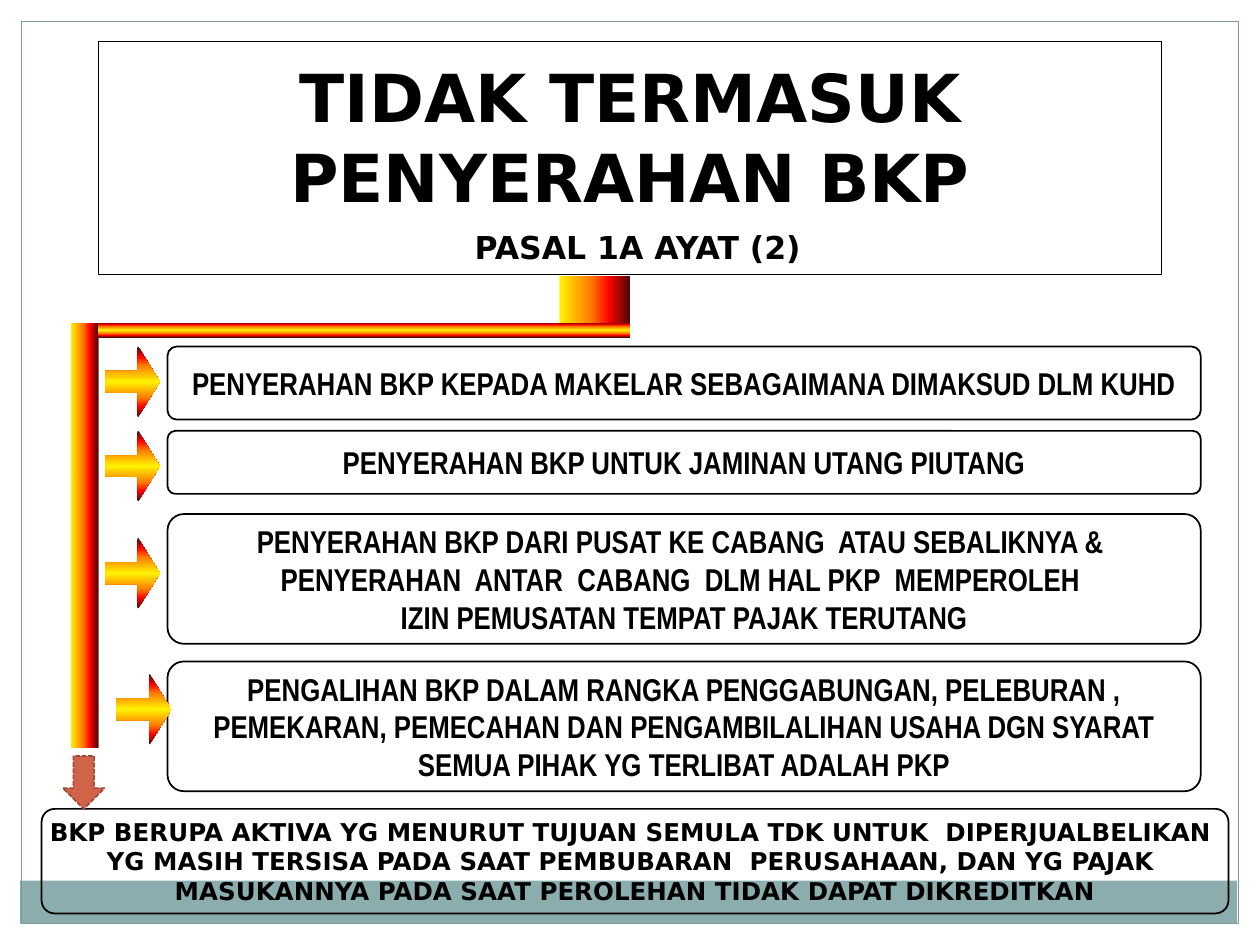
import pptx
import pptx.util
import pptx.dml.color
import pptx.enum.shapes
import pptx.enum.text
import pptx.oxml
import pptx.oxml.ns

SHAPE = pptx.enum.shapes.MSO_SHAPE
ANCHOR = pptx.enum.text.MSO_ANCHOR
CENTER = pptx.enum.text.PP_ALIGN.CENTER
BLACK, BAND, FRAME = "000000", "8CADAE", "7C999A"
BRICK, BRICK_EDGE = "D16349", "9B4936"
WIDE, NARROW = "DejaVu Sans", "Arial Narrow"

# Content
HEADING = "TIDAK TERMASUK PENYERAHAN BKP"
ARTICLE = "PASAL 1A AYAT (2)"

# Exclusions: top, height, arrow left, arrow top, lines
EXCLUSIONS = [
    (2.75, 0.58, 0.83, 2.75,
     ["PENYERAHAN BKP KEPADA MAKELAR SEBAGAIMANA DIMAKSUD DLM KUHD"]),
    (3.42, 0.5, 0.83, 3.42,
     ["PENYERAHAN BKP UNTUK JAMINAN UTANG PIUTANG"]),
    (4.08, 1.03, 0.83, 4.27,
     ["PENYERAHAN BKP DARI PUSAT KE CABANG  ATAU SEBALIKNYA & ",
      "PENYERAHAN  ANTAR  CABANG  DLM HAL PKP  MEMPEROLEH ",
      "IZIN PEMUSATAN TEMPAT PAJAK TERUTANG"]),
    (5.25, 1.03, 0.92, 5.35,
     ["PENGALIHAN BKP DALAM RANGKA PENGGABUNGAN, PELEBURAN ,",
      "PEMEKARAN, PEMECAHAN DAN PENGAMBILALIHAN USAHA DGN SYARAT",
      "SEMUA PIHAK YG TERLIBAT ADALAH PKP"]),
]
LIQUIDATION = [
    "BKP BERUPA AKTIVA YG MENURUT TUJUAN SEMULA TDK UNTUK  DIPERJUALBELIKAN ",
    "YG MASIH TERSISA PADA SAAT PEMBUBARAN  PERUSAHAAN, DAN YG PAJAK ",
    "MASUKANNYA PADA SAAT PEROLEHAN TIDAK DAPAT DIKREDITKAN",
]

# Fire gradients: position in percent, colour
FADE = [(0, "FFF200"), (45, "FF7A00"), (70, "FF0300"), (100, "4D0808")]
GLOW = [(0, "4D0808"), (15, "FF0300"), (27, "FF7A00"), (50, "FFF200"),
        (73, "FF7A00"), (85, "FF0300"), (100, "4D0808")]

# Pipe pieces leading from the title: box, stops, angle
PIPE = [
    ((0.56, 2.56, 0.22, 3.38), FADE, 0),
    ((4.44, 2.19, 0.56, 0.38), FADE, 0),
    ((0.78, 2.56, 4.22, 0.12), GLOW, 90),
]

deck = pptx.Presentation()
deck.slide_width, deck.slide_height = pptx.util.Inches(10), pptx.util.Inches(7.5)
slide = deck.slides.add_slide(deck.slide_layouts[5])


def rgb(code):
    return pptx.dml.color.RGBColor.from_string(code)


def apply(target, formats):
    for name, value in formats.items():
        setattr(target, name, value)


def style_font(font, face, size):
    apply(font, {"name": face, "size": pptx.util.Pt(size), "bold": True})
    font.color.rgb = rgb(BLACK)


def outline(shape, color, width):
    shape.line.color.rgb = rgb(color)
    shape.line.width = pptx.util.Pt(width)


def add_shape(kind, box, fill=None, line=None, adjustments=()):
    shape = slide.shapes.add_shape(kind, *map(pptx.util.Inches, box))
    shape.shadow.inherit = False
    for index, value in enumerate(adjustments):
        shape.adjustments[index] = value
    if fill:
        shape.fill.solid()
        shape.fill.fore_color.rgb = rgb(fill)
    else:
        shape.fill.background()
    if line:
        outline(shape, *line)
    else:
        shape.line.fill.background()
    return shape


def paint_gradient(shape, stops, angle):
    shape.fill.gradient()
    shape.fill.gradient_angle = angle
    stop_list = shape.element.spPr.find(".//" + pptx.oxml.ns.qn("a:gsLst"))
    for old_stop in list(stop_list):
        stop_list.remove(old_stop)
    for position, color in stops:
        stop_list.append(pptx.oxml.parse_xml(
            f'<a:gs {pptx.oxml.ns.nsdecls("a")} pos="{position * 1000}">'
            f'<a:srgbClr val="{color}"/></a:gs>'))


def add_rule_box(box, lines, face, size):
    rule = add_shape(SHAPE.ROUNDED_RECTANGLE, box, line=(BLACK, 1),
                     adjustments=[0.125])
    apply(rule.text_frame, {"word_wrap": False, "vertical_anchor": ANCHOR.MIDDLE})
    for index, line in enumerate(lines):
        paragraph = (rule.text_frame.add_paragraph() if index
                     else rule.text_frame.paragraphs[0])
        paragraph.alignment = CENTER
        run = paragraph.add_run()
        run.text = line
        style_font(run.font, face, size)


# Bottom band and slide frame
add_shape(SHAPE.RECTANGLE, (0.16, 6.99, 9.66, 0.34), fill=BAND)
add_shape(SHAPE.RECTANGLE, (0.17, 0.17, 9.66, 7.16), line=(FRAME, 0.75))

# Title
title = slide.shapes.title
apply(title, dict(zip(("left", "top", "width", "height"),
                      map(pptx.util.Inches, (0.78, 0.33, 8.44, 1.85)))))
outline(title, BLACK, 0.75)
apply(title.text_frame, {"word_wrap": True, "vertical_anchor": ANCHOR.BOTTOM,
                         "auto_size": pptx.enum.text.MSO_AUTO_SIZE.NONE})
heading = title.text_frame.paragraphs[0]
heading.alignment = CENTER
for text, size in [(HEADING, 37.8), (" ", 25.2), (ARTICLE, 18)]:
    run = heading.add_run()
    run.text = text
    style_font(run.font, WIDE, size)
    if text == HEADING:
        heading.add_line_break()

# Pipe
for box, stops, angle in PIPE:
    paint_gradient(add_shape(SHAPE.RECTANGLE, box), stops, angle)

# Exclusions with their arrows
for top, height, arrow_left, arrow_top, lines in EXCLUSIONS:
    add_rule_box((1.33, top, 8.2, height), lines, NARROW, 18)
    arrow = add_shape(SHAPE.RIGHT_ARROW, (arrow_left, arrow_top, 0.44, 0.56),
                      adjustments=[0.306, 0.397])
    paint_gradient(arrow, GLOW, 90)

# Last exclusion below the pipe
add_rule_box((0.33, 6.42, 9.42, 0.83), LIQUIDATION, WIDE, 14)
down_arrow = add_shape(SHAPE.DOWN_ARROW, (0.5, 6, 0.33, 0.42), fill=BRICK,
                       line=(BRICK_EDGE, 0.9))
# python-pptx names the sysDash preset SQUARE_DOT's neighbour, so set it directly
down_arrow.line._get_or_add_ln().append(pptx.oxml.parse_xml(
    f'<a:prstDash {pptx.oxml.ns.nsdecls("a")} val="sysDash"/>'))

deck.save("out.pptx")
